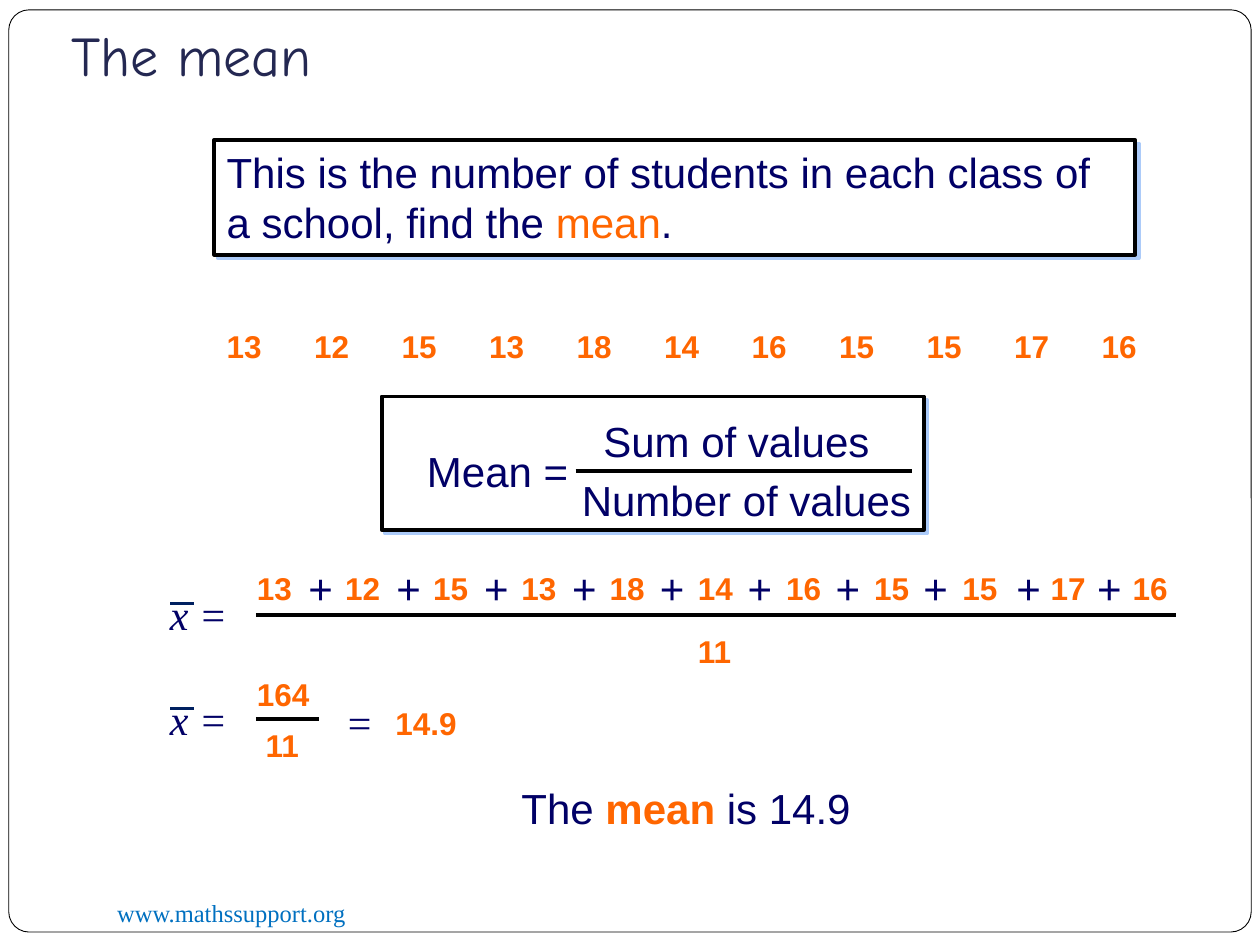
from lxml.etree import SubElement
from pptx import Presentation
from pptx.dml.color import RGBColor
from pptx.enum.shapes import MSO_CONNECTOR as Connector, MSO_SHAPE as Shape
from pptx.enum.text import MSO_ANCHOR as Anchor, PP_ALIGN as Align
from pptx.oxml.ns import qn
from pptx.util import Pt

COLORS = {
    "white": "FFFFFF",
    "black": "000000",
    "navy": "010066",
    "orange": "FF6600",
    "title": "242852",
    "link": "0070C0",
    "bar": "002060",
    "shadow": "ACCBF9",
}
VALUES = ["13", "12", "15", "13", "18", "14", "16", "15", "15", "17", "16"]


def add_text(shapes, box, runs, size=24, font="Arial", wrap=True, italic=False, spacing=1.0):
    shape = shapes.add_textbox(*[Pt(length) for length in box])
    frame = shape.text_frame
    frame.word_wrap = wrap
    paragraph = frame.paragraphs[0]
    paragraph.line_spacing = spacing
    for text, color, bold in runs:
        run = paragraph.add_run()
        run.text = text
        run.font.size = Pt(size)
        run.font.name = font
        run.font.bold = bold
        run.font.italic = italic
        run.font.color.rgb = RGBColor.from_string(COLORS[color])
    return shape


def add_line(shapes, left, right, y, color="black", width=2.25):
    line = shapes.add_connector(Connector.STRAIGHT, Pt(left), Pt(y), Pt(right), Pt(y))
    line.line.color.rgb = RGBColor.from_string(COLORS[color])
    line.line.width = Pt(width)
    SubElement(line._element.spPr, qn("a:effectLst"))


presentation = Presentation()
presentation.slide_width, presentation.slide_height = Pt(720), Pt(540)
slide = presentation.slides.add_slide(presentation.slide_layouts[6])
shapes = slide.shapes

border = shapes.add_shape(Shape.ROUNDED_RECTANGLE, Pt(5), Pt(5.6), Pt(710), Pt(527))
border.adjustments[0] = 0.022
border.shadow.inherit = False
border.fill.solid()
border.fill.fore_color.rgb = RGBColor.from_string(COLORS["white"])
border.line.color.rgb = RGBColor.from_string(COLORS["black"])
border.line.width = Pt(0.5)

add_text(shapes, (59.8, 509.8, 234, 24.5), [("www.mathssupport.org", "link", False)], 14, "Times New Roman")
title = add_text(shapes, (33.8, 9.4, 216, 48.2), [("The mean", "title", False)], 32, "Comic Neue")
title.text_frame.vertical_anchor = Anchor.BOTTOM
title.text_frame.margin_bottom = Pt(7.2)

formula = shapes.add_group_shape().shapes
for container, box in [(shapes, (122.4, 80, 526.3, 65.5)), (formula, (218.2, 226.6, 309.6, 76.3))]:
    panel = container.add_shape(Shape.RECTANGLE, *[Pt(length) for length in box])
    panel.fill.solid()
    panel.fill.fore_color.rgb = RGBColor.from_string(COLORS["white"])
    panel.line.color.rgb = RGBColor.from_string(COLORS["black"])
    panel.line.width = Pt(2.25)
    panel.shadow.inherit = False
    effects = panel._element.spPr.find(qn("a:effectLst"))
    shadow = SubElement(effects, qn("a:outerShdw"), dist=str(Pt(2.8)), dir="2700000", algn="ctr", rotWithShape="0")
    SubElement(shadow, qn("a:srgbClr"), val=COLORS["shadow"])
    if container is shapes:
        panel.text_frame.word_wrap = True
        panel.text_frame.vertical_anchor = Anchor.TOP
        paragraph = panel.text_frame.paragraphs[0]
        paragraph.alignment = Align.LEFT
        for text, color in [
            ("This is the number of students in each class of a school, find the ", "navy"),
            ("mean", "orange"),
            (".", "navy"),
        ]:
            run = paragraph.add_run()
            run.text = text
            run.font.size = Pt(24)
            run.font.name = "Arial"
            run.font.color.rgb = RGBColor.from_string(COLORS[color])

for text, box, wrap in [
    ("Mean =", (236.9, 251.3, 95.8, 36.7), False),
    ("Sum of values", (337.7, 234, 168.5, 36.7), False),
    ("Number of values", (325.4, 267.8, 204.5, 36.7), True),
]:
    add_text(formula, box, [(text, "navy", False)], wrap=wrap)
add_line(formula, 329, 521.3, 269.3)

data_row = add_text(shapes, (122.4, 185.8, 538.6, 26.6), [("\t".join(VALUES), "orange", True)], 18, spacing=0.9)
properties = data_row.text_frame.paragraphs[0]._p.get_or_add_pPr()
tabs = SubElement(properties, qn("a:tabLst"))
for index in range(1, len(VALUES)):
    SubElement(tabs, qn("a:tab"), pos=str(Pt(50 * index)), algn="l")

numbers = [(value, 139.7 + 50.4 * index, 324, 39) for index, value in enumerate(VALUES[:-1])]
numbers += [
    (VALUES[-1], 640.1, 324, 39),
    ("11", 391.7, 360, 39),
    ("164", 139.7, 384.5, 58),
    ("11", 144.7, 414, 39),
    ("14.9", 218.9, 401, 58),
]
for value, left, top, width in numbers:
    add_text(shapes, (left, top, width, 26.6), [(value, "orange", True)], 18, spacing=0.9)

for left in [169.2 + 50.2 * index for index in range(8)] + [573.8, 619.9]:
    add_text(shapes, (left, 321.1, 39, 33.1), [("+", "navy", False)], spacing=0.9)

for top in (332.8, 393):
    mean_symbol = shapes.add_group_shape().shapes
    add_text(mean_symbol, (90, top, 47.5, 36), [("x =", "navy", False)], 24, "Times New Roman", False, True)
    add_line(mean_symbol, 97.2, 110.9, top + 12, "bar", 1.75)

add_line(shapes, 146.2, 671.8, 351.4)
add_line(shapes, 146.2, 182.2, 411.1)
add_text(shapes, (190.1, 394.6, 31, 36), [("=", "navy", False)], 24, "Times New Roman", False, True)
add_text(
    shapes,
    (290.9, 443.5, 221.8, 36),
    [("The ", "navy", False), ("mean ", "orange", True), ("is 14.9", "navy", False)],
)

presentation.save("out.pptx")
